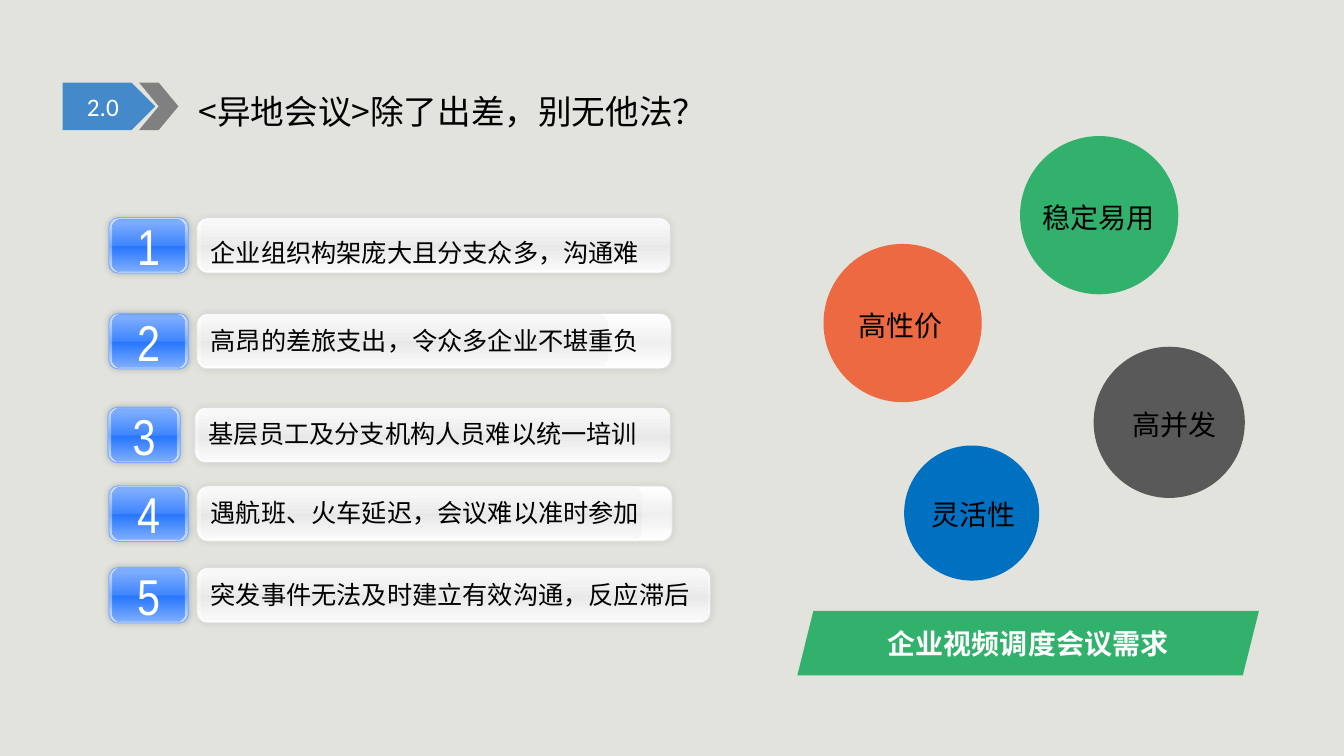
from dataclasses import dataclass
from lxml import etree
from pptx import Presentation
from pptx import util as u
from pptx.dml.color import RGBColor
from pptx.enum import shapes, text
from pptx.oxml import ns

# Lengths are cells of a grid with 100 columns or rows to the inch.
WIDE, HIGH = 1333.33, 750
CELL = u.Inches(0.01)

TITLE = ("<异地会议>除了出差，别无他法？", (197, 90, 521, 40))
STAGE = ("2.0", (62, 82, 92, 47))
ARROW = (138, 82, 39, 47)
NEED = ("企业视频调度会议需求", (791, 606, 458, 64))

# words, top, badge (left, width), panel (left, width), inner width, line spacing
ROWS = [
    ("企业组织构架庞大且分支众多，沟通难", 216, (108, 79), (195, 470), 466, 1.5),
    ("高昂的差旅支出，令众多企业不堪重负", 311, (108, 79), (195, 471), 404, 1),
    ("基层员工及分支机构人员难以统一培训", 404, (107, 72), (193, 472), 468, 1),
    ("遇航班、火车延迟，会议难以准时参加", 482, (108, 79), (195, 472), 438, 1),
    ("突发事件无法及时建立有效沟通，反应滞后", 563, (108, 79), (195, 510), 504, 1),
]
# words, circle (left, top, size), colour, label (left, top, width)
GOALS = [
    ("高性价", (817, 242, 157), "EC6941", (841, 301, 104)),
    ("高并发", (1085, 344, 150), "595959", (1113, 399, 104)),
    ("灵活性", (897, 442, 134), "0070C0", (914, 489, 104)),
    ("稳定易用", (1012, 135, 157), "32B16C", (1024, 194, 132)),
]


@dataclass(frozen=True)
class Theme:
    back: str = "E2E3DC"
    blue: str = "448ACA"
    gray: str = "808080"
    green: str = "32B16C"
    white: str = "FFFFFF"
    black: str = "000000"
    body: str = "Calibri"
    head: str = "Noto Sans CJK SC"
    digit: str = "Arial Narrow"
    big: int = 36
    title: int = 24
    label: int = 20
    small: int = 18
    # Gradient stops: place, colour, opacity
    panel_rim: tuple = ((0, "FFFFFF", 100), (52, "F0F0F0", 100), (100, "FFFFFF", 100))
    panel_top: tuple = ((8, "F8F8F8", 100), (50, "ECECEC", 100), (52, "E8E8E8", 100),
                        (98, "F9F9F9", 100), (100, "FFFFFF", 100))
    badge_rim: tuple = ((0, "D4E4FF", 100), (52, "7DADFF", 100), (100, "D4E4FF", 100))
    badge_top: tuple = ((8, "7DADFF", 100), (50, "2676FF", 70), (52, "2676FF", 100),
                        (98, "7DADFF", 100), (100, "A8C8FF", 100))
    panel_line: str = "DDDDDD"
    badge_line: str = "7DADFF"


T = Theme()
KIND = shapes.MSO_SHAPE
LEFT, MID = text.PP_ALIGN.LEFT, text.PP_ALIGN.CENTER


def cells(box):
    return [round(n * CELL) for n in box]


def tint(node, color, alpha):
    """Add a colour with its opacity in percent."""
    clr = etree.SubElement(node, ns.qn("a:srgbClr"), val=color)
    if alpha < 100:
        etree.SubElement(clr, ns.qn("a:alpha"), val=str(alpha * 1000))


def draw(kind, box, color):
    shape = slide.shapes.add_shape(kind, *cells(box))
    shape.shadow.inherit = False
    shape.line.fill.background()
    shape.fill.solid()
    shape.fill.fore_color.rgb = RGBColor.from_string(color)
    return shape


def plate(box, stops, curve):
    """Draw a rounded plate with a gradient from top to bottom."""
    shape = draw(KIND.ROUNDED_RECTANGLE, box, T.white)
    shape.adjustments[0] = curve
    shape.fill.gradient()
    shape.fill.gradient_angle = 270
    ramp = shape.element.spPr.find(".//" + ns.qn("a:gsLst"))
    for old in list(ramp):
        ramp.remove(old)
    for pos, color, alpha in stops:
        stop = etree.SubElement(ramp, ns.qn("a:gs"), pos=str(pos * 1000))
        tint(stop, color, alpha)
    return shape


def rim(shape, color, alpha):
    """Add a thin outline and a soft glow-like shadow."""
    shape.line.color.rgb = RGBColor.from_string(color)
    shape.line.width = u.Pt(0.75)
    effect = shape.element.spPr.find(ns.qn("a:effectLst"))
    glow = etree.SubElement(effect, ns.qn("a:outerShdw"), blurRad=str(u.Pt(5)),
                            dist="0", dir="0", algn="ctr", rotWithShape="0")
    tint(glow, T.black, alpha)


def write(shape, words, size, color, font=T.body, align=MID, wrap=True, bold=False):
    frame = shape.text_frame
    frame.text = words
    frame.word_wrap = wrap
    frame.vertical_anchor = text.MSO_ANCHOR.MIDDLE
    para = frame.paragraphs[0]
    para.alignment = align
    para.font.size = u.Pt(size)
    para.font.name = font
    para.font.bold = bold
    para.font.color.rgb = RGBColor.from_string(color)
    return frame


def head():
    stage = draw(KIND.PENTAGON, STAGE[1], T.blue)
    write(stage, STAGE[0], T.small, T.white)
    draw(KIND.CHEVRON, ARROW, T.gray)
    title = slide.shapes.title
    title.left, title.top, title.width, title.height = cells(TITLE[1])
    frame = write(title, TITLE[0], T.title, T.black, T.head, LEFT, False)
    frame.vertical_anchor = text.MSO_ANCHOR.TOP
    frame.auto_size = text.MSO_AUTO_SIZE.SHAPE_TO_FIT_TEXT
    frame.margin_left = frame.margin_right = 0
    frame.margin_top = frame.margin_bottom = 0


def row(num, words, top, badge, panel, inner, space):
    tall, low = 55, 52
    left, wide = panel
    rim(plate((left, top, wide, tall), T.panel_rim, 0.2), T.panel_line, 8)
    face = plate((left + 4, top + 0.5, inner, low), T.panel_top, 0.2)
    frame = write(face, words, T.small, T.black, align=LEFT, wrap=False)
    frame.margin_left = u.Inches(0.07)
    frame.paragraphs[0].line_spacing = space
    left, wide = badge
    rim(plate((left, top, wide, tall), T.badge_rim, 0.17), T.badge_line, 18)
    face = plate((left + 4, top + 1.5, wide - 8, low), T.badge_top, 0.17)
    write(face, str(num), T.big, T.white, T.digit)


def goal(words, disc, color, label):
    left, top, size = disc
    draw(KIND.OVAL, (left, top, size, size), color)
    box = slide.shapes.add_textbox(*cells((*label, 44)))
    frame = write(box, words, T.label, T.black, wrap=False)
    frame.vertical_anchor = text.MSO_ANCHOR.TOP
    frame.auto_size = text.MSO_AUTO_SIZE.SHAPE_TO_FIT_TEXT


deck = Presentation()
deck.slide_width, deck.slide_height = cells((WIDE, HIGH))
slide = deck.slides.add_slide(deck.slide_layouts[5])
slide.background.fill.solid()
slide.background.fill.fore_color.rgb = RGBColor.from_string(T.back)

head()
for num, item in enumerate(ROWS, 1):
    row(num, *item)
for item in GOALS:
    goal(*item)
need = draw(KIND.PARALLELOGRAM, NEED[1], T.green)
write(need, NEED[0], T.label, T.white, bold=True)

deck.save("out.pptx")
